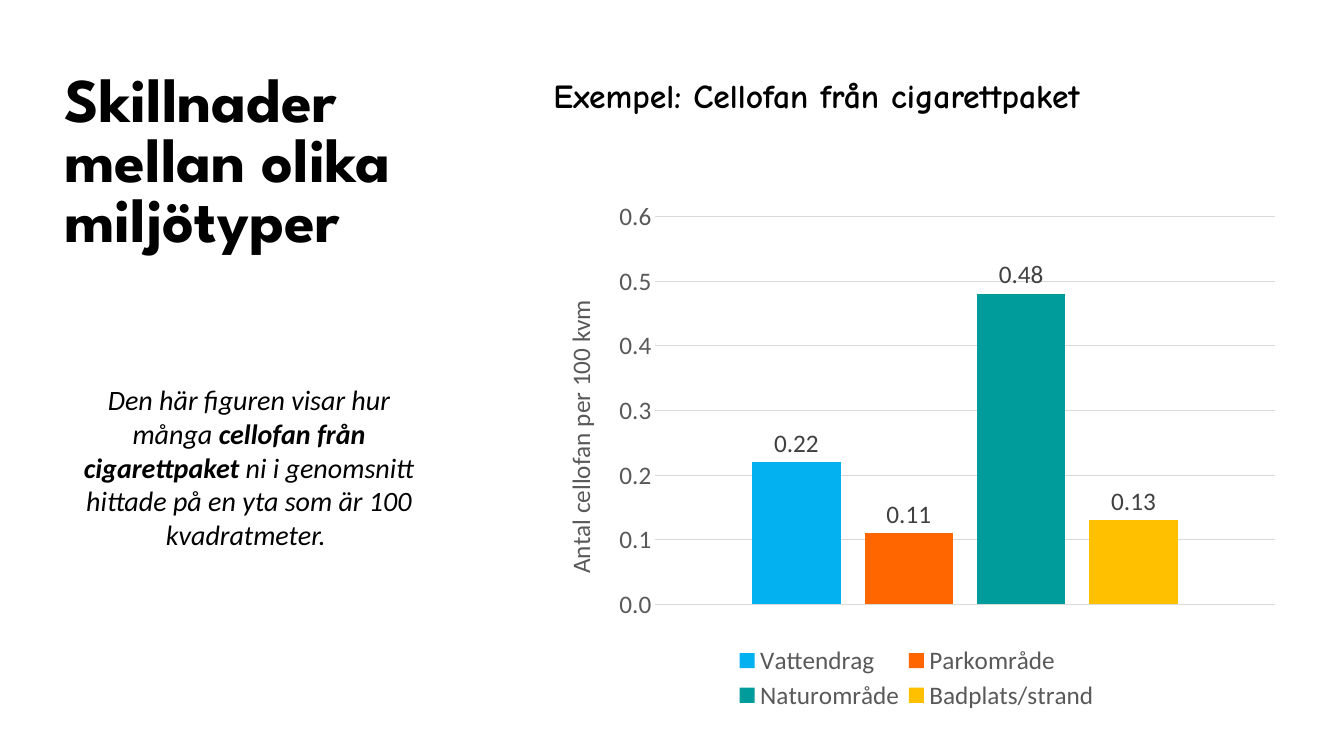
from lxml import etree
from pptx import Presentation
from pptx.chart.data import CategoryChartData
from pptx.dml.color import RGBColor
from pptx.enum.chart import XL_CHART_TYPE, XL_LABEL_POSITION, XL_LEGEND_POSITION, XL_TICK_MARK
from pptx.enum.text import MSO_ANCHOR, PP_ALIGN
from pptx.oxml.ns import qn
from pptx.util import Inches, Pt

COLUMNS = XL_CHART_TYPE.COLUMN_CLUSTERED
OUTSIDE = XL_LABEL_POSITION.OUTSIDE_END
BOTTOM_LEGEND = XL_LEGEND_POSITION.BOTTOM
NO_TICK = XL_TICK_MARK.NONE
TOP, BOTTOM = MSO_ANCHOR.TOP, MSO_ANCHOR.BOTTOM
LEFT, CENTER = PP_ALIGN.LEFT, PP_ALIGN.CENTER

COLORS = {
    "text": "000000", "axis": "595959", "label": "404040", "grid": "D9D9D9",
    "blue": "03B0F0", "orange": "FF6600", "teal": "009C9B", "yellow": "FFC000",
}
ENVIRONMENTS = [
    ("Vattendrag", 0.22, "blue"),
    ("Parkområde", 0.11, "orange"),
    ("Naturområde", 0.48, "teal"),
    ("Badplats/strand", 0.13, "yellow"),
]


def rgb(name):
    return RGBColor.from_string(COLORS[name])


def set_font(font, size, color, name="Calibri", bold=False, italic=False):
    font.name, font.size = name, Pt(size)
    font.bold, font.italic = bold, italic
    font.color.rgb = rgb(color)


def add_text(s, box, runs, size, font="Calibri", italic=False,
             align=LEFT, anchor=TOP, spacing=None):
    """Add a one-paragraph text box; runs are (text, bold) pairs."""
    tf = s.shapes.add_textbox(*map(Inches, box)).text_frame
    tf.word_wrap = True
    tf.vertical_anchor = anchor
    p = tf.paragraphs[0]
    p.alignment = align
    if spacing:
        p.line_spacing = spacing
    for text, bold in runs:
        r = p.add_run()
        r.text = text
        set_font(r.font, size, "text", font, bold, italic)


def set_layout(element, index, **values):
    """Place a chart part by fractions of the chart's size."""
    for old in element.findall(qn("c:layout")):
        element.remove(old)
    layout = etree.Element(qn("c:layout"))
    manual = etree.SubElement(layout, qn("c:manualLayout"))
    for tag, value in values.items():
        etree.SubElement(manual, qn("c:" + tag)).set("val", str(value))
    element.insert(index, layout)


def add_column_chart(s, box):
    data = CategoryChartData()
    data.categories = ["1"]
    for name, value, _ in ENVIRONMENTS:
        data.add_series(name, [value])
    chart = s.shapes.add_chart(COLUMNS, *map(Inches, box), data).chart
    chart.has_title = False
    set_font(chart.font, 18, "text")

    # Columns and their labels
    plot = chart.plots[0]
    plot.vary_by_categories = False
    plot.gap_width, plot.overlap = 219, -27
    for series, (_, _, color) in zip(plot.series, ENVIRONMENTS):
        series.format.fill.solid()
        series.format.fill.fore_color.rgb = rgb(color)
        labels = series.data_labels
        labels.show_value = True
        labels.number_format, labels.number_format_is_linked = "0.00", False
        labels.position = OUTSIDE
        set_font(labels.font, 18, "label")

    # Axes
    chart.category_axis.visible = False
    axis = chart.value_axis
    axis.minimum_scale, axis.maximum_scale, axis.major_unit = 0, 0.6, 0.1
    axis.major_tick_mark = axis.minor_tick_mark = NO_TICK
    axis.format.line.fill.background()
    axis.major_gridlines.format.line.color.rgb = rgb("grid")
    axis.major_gridlines.format.line.width = Pt(0.75)
    ticks = axis.tick_labels
    ticks.number_format, ticks.number_format_is_linked = "0.0", False
    set_font(ticks.font, 18, "axis")
    r = axis.axis_title.text_frame.paragraphs[0].add_run()
    r.text = "Antal cellofan per 100 kvm"
    set_font(r.font, 18, "axis")

    # Legend
    chart.has_legend = True
    legend = chart.legend
    legend.position, legend.include_in_layout = BOTTOM_LEGEND, False
    set_font(legend.font, 18, "axis")

    # Placement of plot, axis title and legend
    plot_area = chart.element.find(".//" + qn("c:plotArea"))
    set_layout(plot_area, 0, layoutTarget="inner", xMode="edge", yMode="edge",
               x=0.15, y=0.05, w=0.83, h=0.74)
    set_layout(axis.axis_title.element if hasattr(axis.axis_title, "element")
               else plot_area.find(".//" + qn("c:title")), 1,
               xMode="edge", yMode="edge", x=0.02, y=0.2)
    set_layout(chart.element.find(".//" + qn("c:legend")), 1,
               xMode="edge", yMode="edge", x=0.25, y=0.86, w=0.5, h=0.14) \
        if hasattr(chart, "element") else None


def main():
    prs = Presentation()
    prs.slide_width, prs.slide_height = Inches(13.33), Inches(7.5)
    s = prs.slides.add_slide(prs.slide_layouts[6])

    # Chart heading, explanation, chart and slide title
    add_text(s, (5.39, 0.69, 7.88, 0.5),
             [("Exempel: Cellofan från cigarettpaket", True)], 24, "Comic Neue")
    add_text(s, (0.73, 3.75, 3.48, 1.78),
             [("Den här figuren visar hur många ", False),
              ("cellofan från cigarettpaket", True),
              (" ni i genomsnitt hittade på en yta som är 100 kvadratmeter. ", False)],
             20, italic=True, align=CENTER)
    add_column_chart(s, (5.39, 1.89, 7.4, 5.2))
    add_text(s, (0.54, 0.69, 4.63, 1.88),
             [("Skillnader mellan olika miljötyper", True)], 44.4, "League Spartan",
             anchor=BOTTOM, spacing=0.8)

    prs.save("out.pptx")


if __name__ == "__main__":
    main()
